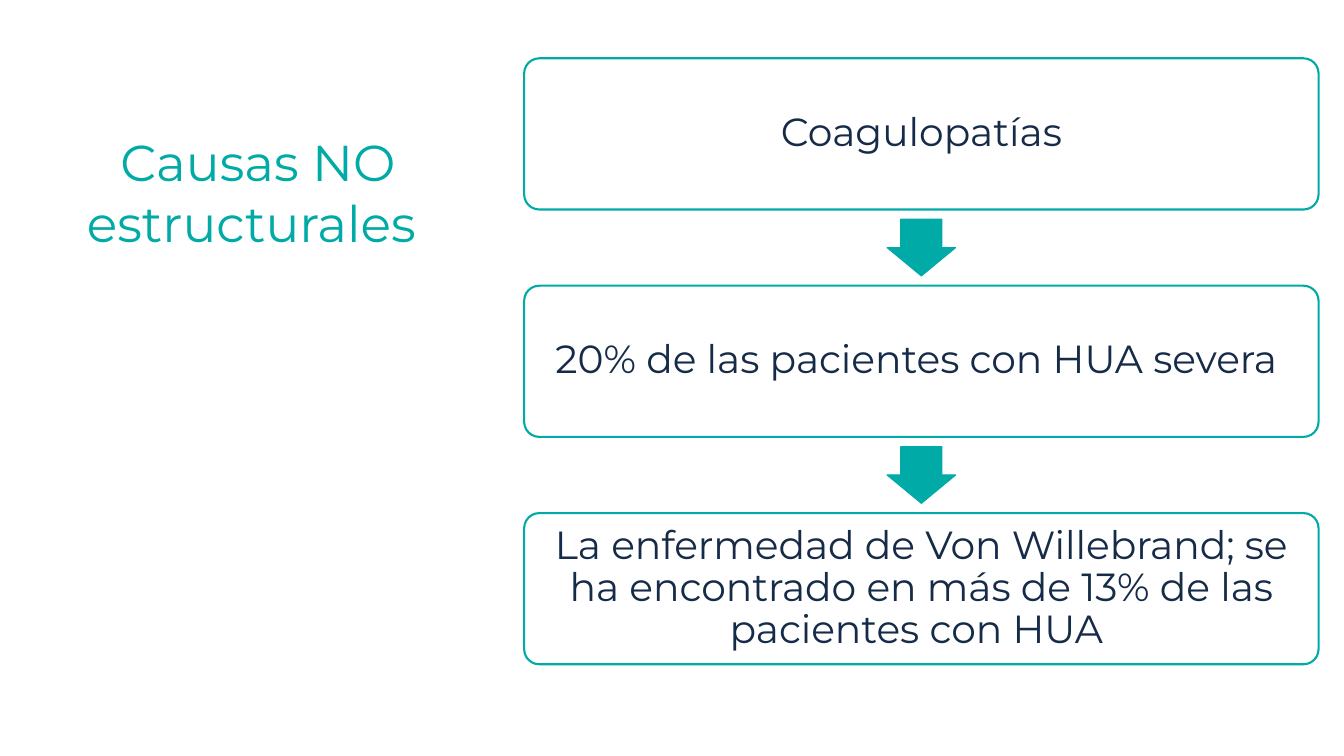
from pptx import Presentation
from pptx import util as u
from pptx.dml.color import RGBColor
from pptx.enum import shapes, text

TEAL = RGBColor(0x00, 0xAA, 0xA7)
NAVY = RGBColor(0x15, 0x2B, 0x48)
WHITE = RGBColor(0xFF, 0xFF, 0xFF)

CARD_LEFT, CARD_TOP = 13.21, 1.47
CARD_WIDTH, CARD_HEIGHT = 20.02, 3.81
CARD_STEP = 5.73
ARROW_WIDTH, ARROW_HEIGHT = 1.73, 1.43

# The last two texts end in a no-break space.
STEPS = [
    "Coagulopatías",
    "20% de las pacientes con HUA severa ",
    "La enfermedad de Von Willebrand; se ha encontrado en más de 13% de las pacientes con HUA ",
]


class FlowPage:
    font_name = "Montserrat"

    def __init__(self, deck):
        self.page = deck.slides.add_slide(deck.slide_layouts[5])

    def label(self, box, words, size, color, anchor):
        frame = box.text_frame
        frame.text = words
        frame.word_wrap = True
        frame.auto_size = text.MSO_AUTO_SIZE.NONE
        frame.vertical_anchor = anchor
        para = frame.paragraphs[0]
        para.alignment = text.PP_ALIGN.CENTER
        para.font.name = self.font_name
        para.font.size = u.Pt(size)
        para.font.color.rgb = color
        return frame

    def title(self, words, left, top, width, height):
        box = self.page.shapes.title
        box.left, box.top = u.Cm(left), u.Cm(top)
        box.width, box.height = u.Cm(width), u.Cm(height)
        self.label(box, words, 36, TEAL, text.MSO_ANCHOR.TOP)

    def shape(self, kind, left, top, width, height, fill, line_width):
        box = self.page.shapes.add_shape(
            kind, u.Cm(left), u.Cm(top), u.Cm(width), u.Cm(height))
        box.shadow.inherit = False
        box.fill.solid()
        box.fill.fore_color.rgb = fill
        box.line.color.rgb = TEAL
        box.line.width = u.Pt(line_width)
        return box

    def card(self, words, top):
        box = self.shape(shapes.MSO_SHAPE.ROUNDED_RECTANGLE, CARD_LEFT, top,
                         CARD_WIDTH, CARD_HEIGHT, WHITE, 1.5)
        box.adjustments[0] = 0.1
        frame = self.label(box, words, 28, NAVY, text.MSO_ANCHOR.MIDDLE)
        frame.margin_left = frame.margin_right = u.Cm(0.3)
        frame.margin_top = frame.margin_bottom = u.Cm(0.3)
        frame.paragraphs[0].line_spacing = 0.9

    def arrow_below(self, card_top):
        """Centre a down arrow in the gap under a card."""
        left = CARD_LEFT + (CARD_WIDTH - ARROW_WIDTH) / 2
        top = card_top + (CARD_HEIGHT + CARD_STEP - ARROW_HEIGHT) / 2
        arrow = self.shape(shapes.MSO_SHAPE.DOWN_ARROW, left, top,
                           ARROW_WIDTH, ARROW_HEIGHT, TEAL, 0.75)
        arrow.adjustments[0] = 0.6
        arrow.adjustments[1] = 0.5


def main():
    deck = Presentation()
    deck.slide_width, deck.slide_height = u.Cm(33.87), u.Cm(19.05)
    flow = FlowPage(deck)
    flow.title("Causas NO estructurales ", 1.19, 3.18, 10.62, 3.33)
    for index, words in enumerate(STEPS):
        top = CARD_TOP + index * CARD_STEP
        flow.card(words, top)
        if index < len(STEPS) - 1:
            flow.arrow_below(top)
    deck.save("out.pptx")


if __name__ == "__main__":
    main()
